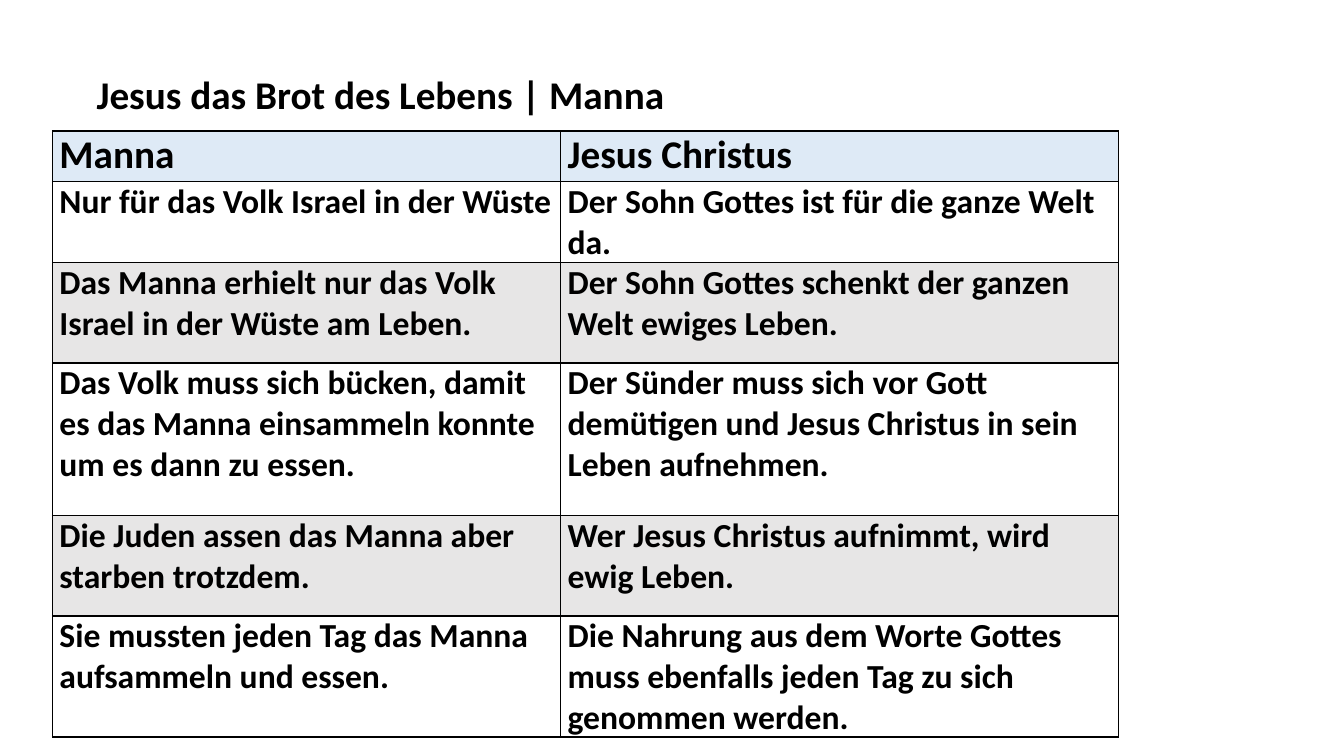
from dataclasses import dataclass
from typing import Optional

import lxml.etree
import pptx
import pptx.dml.color
import pptx.oxml.ns
import pptx.util

Inches = pptx.util.Inches
Pt = pptx.util.Pt
RGBColor = pptx.dml.color.RGBColor
qn = pptx.oxml.ns.qn

BLACK = RGBColor(0x00, 0x00, 0x00)
HEADER_BLUE = RGBColor(0xDE, 0xEA, 0xF6)
BAND_GRAY = RGBColor(0xE7, 0xE6, 0xE6)
FONT = "Calibri"
COLUMN_WIDTHS = (5.04, 5.53)


@dataclass(frozen=True)
class ComparisonRow:
    manna: str
    jesus: str
    height: float
    size: int = 24
    fill: Optional[RGBColor] = None


ROWS = [
    ComparisonRow("Manna", "Jesus Christus", 0.5, 28, HEADER_BLUE),
    ComparisonRow(
        "Nur für das Volk Israel in der Wüste",
        "Der Sohn Gottes ist für die ganze Welt da.",
        0.5,
    ),
    ComparisonRow(
        "Das Manna erhielt nur das Volk Israel in der Wüste am Leben.",
        "Der Sohn Gottes schenkt der ganzen Welt ewiges Leben.",
        1,
        fill=BAND_GRAY,
    ),
    ComparisonRow(
        "Das Volk muss sich bücken, damit es das Manna einsammeln konnte um es dann zu essen.",
        "Der Sünder muss sich vor Gott demütigen und Jesus Christus in sein Leben aufnehmen.",
        1.51,
    ),
    ComparisonRow(
        "Die Juden assen das Manna aber starben trotzdem.",
        "Wer Jesus Christus aufnimmt, wird ewig Leben.",
        1,
        fill=BAND_GRAY,
    ),
    ComparisonRow(
        "Sie mussten jeden Tag das Manna aufsammeln und essen.",
        "Die Nahrung aus dem Worte Gottes muss ebenfalls jeden Tag zu sich genommen werden.",
        1,
    ),
]


def write_text(tf: pptx.text.text.TextFrame, text: str, size: int) -> None:
    tf.text = text
    font = tf.paragraphs[0].runs[0].font
    font.name = FONT
    font.size = Pt(size)
    font.bold = True
    font.color.rgb = BLACK


def add_borders(cell: pptx.table._Cell) -> None:
    tcPr = cell._tc.get_or_add_tcPr()
    for tag in ("a:lnL", "a:lnR", "a:lnT", "a:lnB"):
        ln = lxml.etree.SubElement(tcPr, qn(tag), w=str(Pt(1)))
        fill = lxml.etree.SubElement(ln, qn("a:solidFill"))
        lxml.etree.SubElement(fill, qn("a:srgbClr"), val=str(BLACK))


def format_cell(cell: pptx.table._Cell, text: str, row: ComparisonRow) -> None:
    cell.margin_left = cell.margin_right = Inches(0.07)
    cell.margin_top = cell.margin_bottom = Inches(0)
    write_text(cell.text_frame, text, row.size)
    add_borders(cell)
    if row.fill is None:
        cell.fill.background()
    else:
        cell.fill.solid()
        cell.fill.fore_color.rgb = row.fill


def add_title(s: pptx.slide.Slide) -> None:
    sp = s.shapes.add_textbox(Inches(0.86), Inches(0.65), Inches(6.57), Inches(0.57))
    tf = sp.text_frame
    tf.word_wrap = True
    tf.auto_size = pptx.enum.text.MSO_AUTO_SIZE.SHAPE_TO_FIT_TEXT
    write_text(tf, "Jesus das Brot des Lebens | Manna", 28)


def add_comparison(s: pptx.slide.Slide) -> None:
    table = s.shapes.add_table(
        len(ROWS),
        len(COLUMN_WIDTHS),
        Inches(0.52),
        Inches(1.3),
        Inches(sum(COLUMN_WIDTHS)),
        Inches(sum(row.height for row in ROWS)),
    ).table
    for column, width in zip(table.columns, COLUMN_WIDTHS):
        column.width = Inches(width)
    for i, row in enumerate(ROWS):
        table.rows[i].height = Inches(row.height)
        for j, text in enumerate((row.manna, row.jesus)):
            format_cell(table.cell(i, j), text, row)


def main() -> None:
    prs = pptx.Presentation()
    prs.slide_width = Inches(13.33)
    prs.slide_height = Inches(7.5)
    s = prs.slides.add_slide(prs.slide_layouts[6])
    add_title(s)
    add_comparison(s)
    prs.save("out.pptx")


if __name__ == "__main__":
    main()
